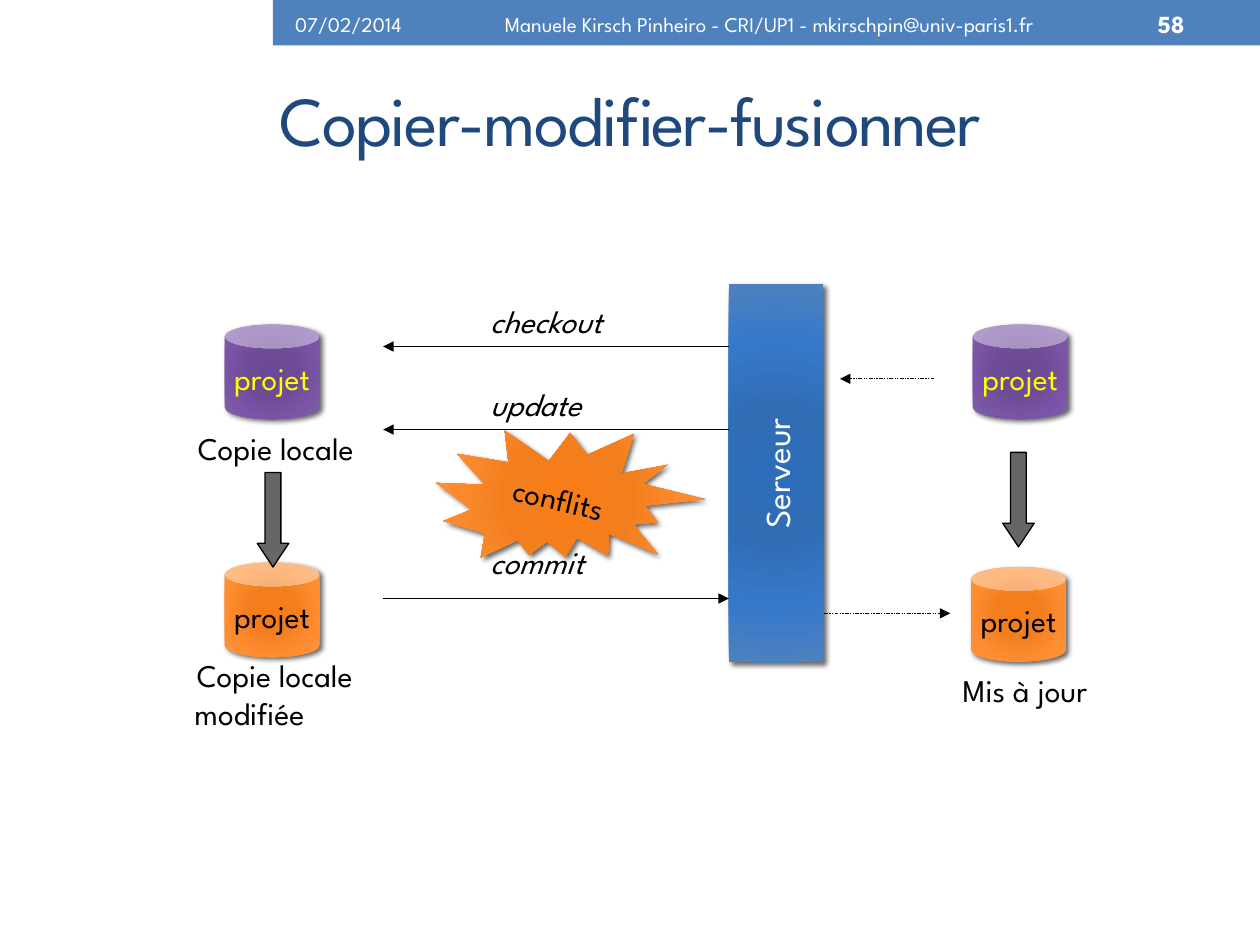
from lxml.etree import SubElement
from pptx import Presentation
from pptx.dml.color import RGBColor
from pptx.enum.shapes import MSO_CONNECTOR, MSO_SHAPE
from pptx.enum.text import MSO_ANCHOR, PP_ALIGN
from pptx.oxml.ns import qn
from pptx.util import Pt

FONT = "League Spartan"
COLORS = {"white": "FFFFFF", "black": "000000", "yellow": "FFFF00",
          "banner": "4F81BD", "title": "1F497D", "arrow": "666666"}
GRADIENTS = {
    "purple": ["6C4898", "6D4B95", "7954A7", "8064A2"],
    "blue": ["2C6CB9", "316DB5", "3679CA", "4F81BD"],
    "orange": ["F97D16", "F27E1E", "FF8D30", "F79646"],
}
STOPS = [0, 34, 70, 100]
LEFT, CENTER, RIGHT = PP_ALIGN.LEFT, PP_ALIGN.CENTER, PP_ALIGN.RIGHT

TITLE = "Copier-modifier-fusionner"
HEADER = [
    ("07/02/2014", 161.5, 85, 12, LEFT, False),
    ("58", 643.5, 40.5, 14, RIGHT, True),
    ("Manuele Kirsch Pinheiro - CRI/UP1 - mkirschpin@univ-paris1.fr", 241.5, 396.5, 12, CENTER, False),
]
CAN_SIZE = 54
PROJECTS = [(556, 185.5, "purple", "yellow"), (128.5, 185.5, "purple", "yellow"),
            (128.5, 321.5, "orange", "black"), (555, 324, "orange", "black")]
DOWN_ARROWS = [(147, 270), (573, 258.5)]
CLIENT_X, SERVER_X = 219, 416.5
LINKS = [
    ((SERVER_X, 198), (CLIENT_X, 198), False),
    ((SERVER_X, 245.5), (CLIENT_X, 245.5), False),
    ((CLIENT_X, 342), (SERVER_X, 342), False),
    ((534, 216.5), (480, 216.5), True),
    ((471, 350.5), (543, 350.5), True),
]
LABELS = [
    (["Copie locale"], (106, 241.5, 106, 23), False, [LEFT]),
    (["checkout"], (273, 169, 86.5, 27.5), True, [LEFT]),
    (["update"], (273, 216.5, 69, 35), True, [LEFT]),
    (["commit"], (273, 307, 72, 35), True, [LEFT]),
    (["Copie locale", "modifiée"], (104, 371.5, 106, 55.5), False, [CENTER, LEFT]),
    (["Mis à jour"], (543, 380, 90, 23), False, [LEFT]),
]


def color(name):
    return RGBColor.from_string(COLORS[name])


def write(shape, lines, size, tint, aligns, bold=False, italic=False, wrap=False, anchor=MSO_ANCHOR.MIDDLE):
    frame = shape.text_frame
    frame.word_wrap = wrap
    frame.vertical_anchor = anchor
    frame.text = "\n".join(lines)
    for paragraph, align in zip(frame.paragraphs, aligns):
        paragraph.alignment = align
        font = paragraph.font
        font.name, font.size, font.bold, font.italic = FONT, Pt(size), bold, italic
        font.color.rgb = color(tint)


def add_text(slide, box, *args, **options):
    write(slide.shapes.add_textbox(*map(Pt, box)), *args, **options)


def add_flat(slide, kind, box, tint):
    shape = slide.shapes.add_shape(kind, *map(Pt, box))
    shape.shadow.inherit = False
    shape.fill.solid()
    shape.fill.fore_color.rgb = color(tint)
    shape.line.fill.background()
    return shape


def add_glossy(slide, kind, box, gradient, text, size, tint):
    shape = slide.shapes.add_shape(kind, *map(Pt, box))
    shape.line.fill.background()
    shape.shadow.inherit = False
    properties = shape._element.spPr
    fill = SubElement(properties, qn("a:gradFill"), rotWithShape="1")
    stops = SubElement(fill, qn("a:gsLst"))
    for position, tone in zip(STOPS, GRADIENTS[gradient]):
        stop = SubElement(stops, qn("a:gs"), pos=str(position * 1000))
        SubElement(stop, qn("a:srgbClr"), val=tone)
    circle = SubElement(fill, qn("a:path"), {"path": "circle"})
    SubElement(circle, qn("a:fillToRect"), {side: "100000" for side in "ltrb"})
    properties.find(qn("a:ln")).addprevious(fill)
    shadow = SubElement(properties.find(qn("a:effectLst")), qn("a:outerShdw"),
                        blurRad=str(Pt(3)), dist=str(Pt(2)), dir="2700000", rotWithShape="0")
    shade = SubElement(shadow, qn("a:srgbClr"), val=COLORS["black"])
    SubElement(shade, qn("a:alpha"), val="60000")
    write(shape, [text], size, tint, [CENTER])
    return shape


def add_link(slide, start, end, dashed):
    link = slide.shapes.add_connector(MSO_CONNECTOR.STRAIGHT, *map(Pt, start + end))
    link.line.color.rgb = color("black")
    link.line.width = Pt(0.75)
    properties = link._element.spPr
    outline = properties.find(qn("a:ln"))
    if dashed:
        SubElement(outline, qn("a:prstDash"), val="sysDashDotDot")
    SubElement(outline, qn("a:tailEnd"), type="triangle")
    SubElement(properties, qn("a:effectLst"))


def main():
    """Build the copy-modify-merge slide."""
    deck = Presentation()
    deck.slide_width, deck.slide_height = Pt(720), Pt(540)
    slide = deck.slides.add_slide(deck.slide_layouts[5])

    title = slide.shapes.title
    title.left, title.top, title.width, title.height = map(Pt, (36.5, 32, 647.5, 72))
    write(title, [TITLE], 40, "title", [CENTER], wrap=True)
    frame = title.text_frame
    frame.margin_left = frame.margin_right = frame.margin_top = frame.margin_bottom = 0
    for span in frame.paragraphs[0].runs:
        span._r.get_or_add_rPr().set("spc", "-100")

    add_flat(slide, MSO_SHAPE.RECTANGLE, (156, 0, 564, 26), "banner")
    for text, left, width, size, align, bold in HEADER:
        add_text(slide, (left, 1.5, width, 24.5), [text], size, "white", [align], bold=bold, wrap=True)

    server = add_glossy(slide, MSO_SHAPE.RECTANGLE, (335.5, 243.5, 216, 54), "blue", "Serveur", 20, "white")
    server.rotation = 270
    for left, top, gradient, tint in PROJECTS:
        add_glossy(slide, MSO_SHAPE.CAN, (left, top, CAN_SIZE, CAN_SIZE), gradient, "projet", 18, tint)
    for left, top in DOWN_ARROWS:
        arrow = add_flat(slide, MSO_SHAPE.DOWN_ARROW, (left, top, 18, 54), "arrow")
        arrow.adjustments[1] = 0.75
        arrow.line.color.rgb = color("black")
        arrow.line.width = Pt(0.75)
    for start, end, dashed in LINKS:
        add_link(slide, start, end, dashed)
    for lines, box, italic, aligns in LABELS:
        add_text(slide, box, lines, 18, "black", aligns, italic=italic, anchor=MSO_ANCHOR.TOP)

    conflict = add_glossy(slide, MSO_SHAPE.EXPLOSION2, (249, 240.5, 152, 88.5), "orange", "conflits", 18, "black")
    conflict.rotation = 13
    deck.save("out.pptx")


if __name__ == "__main__":
    main()
